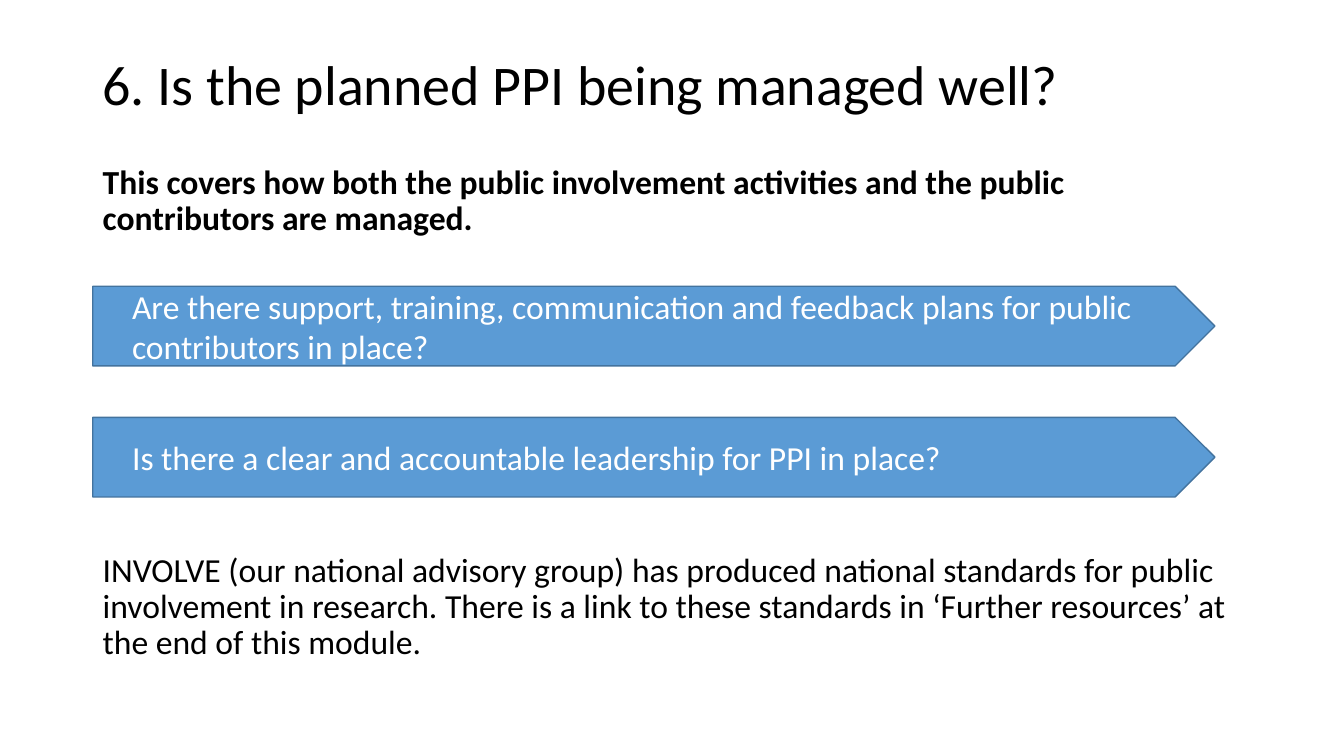
from pptx import Presentation
from pptx.dml.color import RGBColor
from pptx.enum.shapes import MSO_SHAPE
from pptx.enum.text import MSO_ANCHOR, PP_ALIGN
from pptx.util import Inches, Pt

PENTAGON = MSO_SHAPE.PENTAGON
TOP, MIDDLE = MSO_ANCHOR.TOP, MSO_ANCHOR.MIDDLE
LEFT = PP_ALIGN.LEFT


def color(value):
    return RGBColor.from_string(value)


def write(shape, text, size=24, fill="000000", bold=False, anchor=TOP,
          line_spacing=0.9, insets=(0.1, 0.05, 0.1, 0.05)):
    frame = shape.text_frame
    frame.word_wrap = True
    frame.vertical_anchor = anchor
    (frame.margin_left, frame.margin_top,
     frame.margin_right, frame.margin_bottom) = map(Inches, insets)
    para = frame.paragraphs[0]
    para.alignment = LEFT
    para.line_spacing = line_spacing
    span = para.add_run()
    span.text = text
    span.font.name = "Calibri"
    span.font.size = Pt(size)
    span.font.bold = bold
    span.font.color.rgb = color(fill)


class QuestionSlide:
    margin = 0.92
    arrow_fill = "5B9BD5"
    arrow_line = "43739E"

    def __init__(self, deck):
        self.slide = deck.slides.add_slide(deck.slide_layouts[6])

    def text(self, top, width, height, text, **style):
        box = self.slide.shapes.add_textbox(
            Inches(self.margin), Inches(top), Inches(width), Inches(height))
        write(box, text, **style)

    def arrow(self, top, text):
        arrow = self.slide.shapes.add_shape(
            PENTAGON, Inches(self.margin), Inches(top), Inches(11.13), Inches(0.79))
        arrow.shadow.inherit = False
        arrow.fill.solid()
        arrow.fill.fore_color.rgb = color(self.arrow_fill)
        arrow.line.color.rgb = color(self.arrow_line)
        arrow.line.width = Pt(1)
        write(arrow, text, fill="FFFFFF", anchor=MIDDLE, line_spacing=1.0,
              insets=(0.39, 0, 0.1, 0))


def main():
    deck = Presentation()
    deck.slide_width, deck.slide_height = Inches(13.33), Inches(7.5)
    page = QuestionSlide(deck)

    # Title and introduction
    page.text(0.14, 11.1, 1.45, "6. Is the planned PPI being managed well?",
              size=40, anchor=MIDDLE)
    page.text(1.59, 11.5, 0.85,
              "This covers how both the public involvement activities and "
              "the public contributors are managed.", bold=True)

    # Questions, evenly spaced
    questions = [
        "Are there support, training, communication and feedback plans "
        "for public contributors in place?",
        "Is there a clear and accountable leadership for PPI in place?",
    ]
    for index, question in enumerate(questions):
        page.arrow(2.84 + 1.3 * index, question)

    # Closing note
    page.text(5.44, 11.5, 0.85,
              "INVOLVE (our national advisory group) has produced national "
              "standards for public involvement in research. There is a link to "
              "these standards in ‘Further resources’ at the end of this module.")

    deck.save("out.pptx")


if __name__ == "__main__":
    main()
